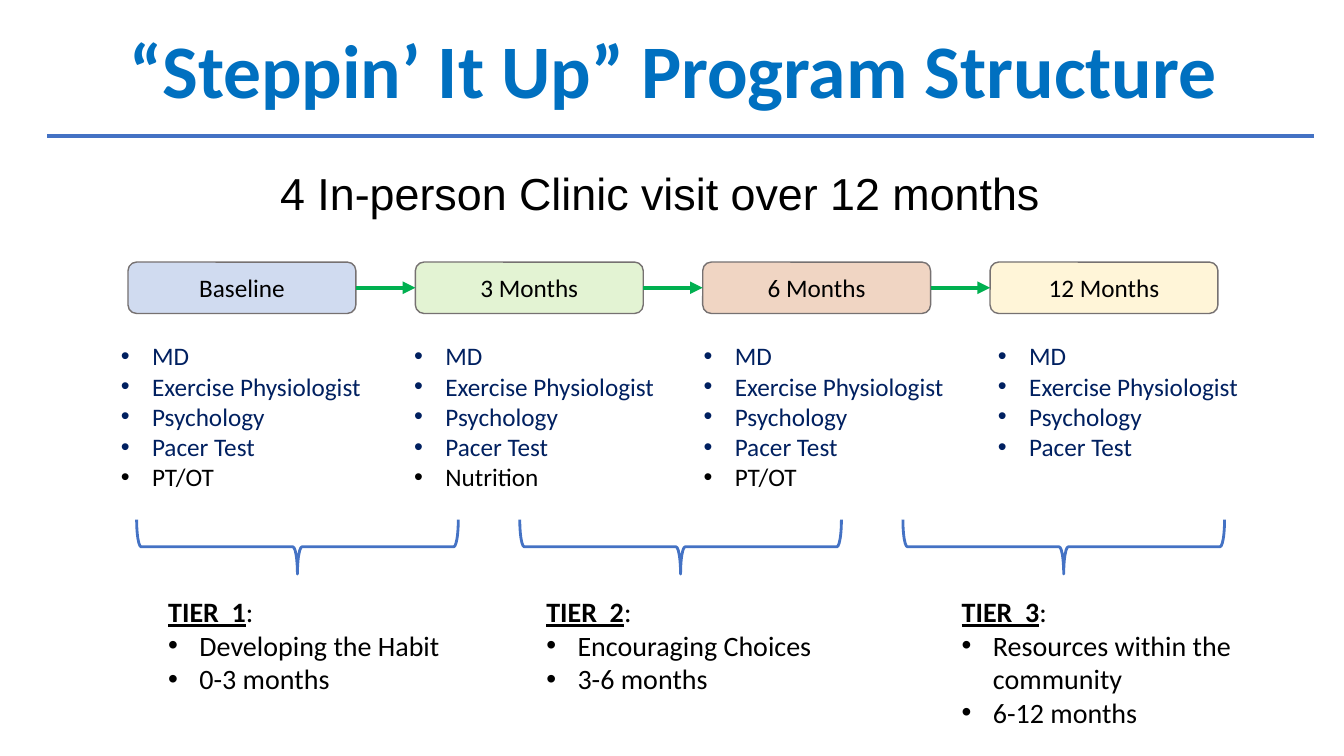
import pptx
import pptx.util
import pptx.dml.color
import pptx.enum.shapes
import pptx.enum.text
import pptx.oxml
import pptx.oxml.ns
import lxml.etree

Inches = pptx.util.Inches
Pt = pptx.util.Pt
RGBColor = pptx.dml.color.RGBColor
MSO_SHAPE = pptx.enum.shapes.MSO_SHAPE
STRAIGHT = pptx.enum.shapes.MSO_CONNECTOR.STRAIGHT
PP_ALIGN = pptx.enum.text.PP_ALIGN
MSO_ANCHOR = pptx.enum.text.MSO_ANCHOR
qn = pptx.oxml.ns.qn

TITLE_BLUE = RGBColor(0x00, 0x70, 0xC0)
BLUE = RGBColor(0x44, 0x72, 0xC4)
LIME = RGBColor(0x92, 0xD0, 0x50)
RUST = RGBColor(0xC5, 0x5A, 0x11)
YELLOW = RGBColor(0xFF, 0xD9, 0x66)
GRAY = RGBColor(0x76, 0x71, 0x71)
GREEN = RGBColor(0x00, 0xB0, 0x50)
NAVY = RGBColor(0x00, 0x20, 0x60)
BLACK = RGBColor(0x00, 0x00, 0x00)

CORE_TEAM = ["MD", "Exercise Physiologist", "Psychology", "Pacer Test"]
# label, fill, left of the list, extra staff at this visit
VISITS = [
    ("Baseline", BLUE, 1.1, ["PT/OT"]),
    ("3 Months", LIME, 4.01, ["Nutrition"]),
    ("6 Months", RUST, 6.88, ["PT/OT"]),
    ("12 Months", YELLOW, 9.8, []),
]
# left of the text, heading, items
TIERS = [
    (1.57, "TIER  1", ["Developing the Habit", "0-3 months"]),
    (5.32, "TIER  2", ["Encouraging Choices", "3-6 months"]),
    (9.44, "TIER  3", ["Resources within the community", "6-12 months"]),
]


def add_text(left, top, width, height, lines, size, font="Calibri", bullets_from=0):
    """Add a text box; lines from index bullets_from on get a bullet."""
    tf = slide.shapes.add_textbox(
        Inches(left), Inches(top), Inches(width), Inches(height)).text_frame
    tf.word_wrap = True
    tf.text = "\n".join(lines)
    for i, p in enumerate(tf.paragraphs):
        p.font.size = Pt(size)
        p.font.name = font
        p.font.color.rgb = BLACK
        for r in p.runs:
            r.font.size = Pt(size)
            r.font.name = font
            r.font.color.rgb = BLACK
        if i >= bullets_from:
            pPr = p._p.get_or_add_pPr()
            pPr.set("marL", str(Inches(0.31)))
            pPr.set("indent", str(-Inches(0.31)))
            bullet_font = pptx.oxml.parse_xml(
                '<a:buFont %s typeface="Arial"/>' % pptx.oxml.ns.nsdecls("a"))
            bullet = pptx.oxml.parse_xml(
                '<a:buChar %s char="•"/>' % pptx.oxml.ns.nsdecls("a"))
            pPr.insert(0, bullet_font)
            pPr.insert(1, bullet)
    return tf


def add_line(x1, y1, x2, y2, color, width):
    cxn = slide.shapes.add_connector(
        STRAIGHT, Inches(x1), Inches(y1), Inches(x2), Inches(y2))
    cxn.line.color.rgb = color
    cxn.line.width = Pt(width)
    lxml.etree.SubElement(cxn._element.spPr, qn("a:effectLst"))
    return cxn


prs = pptx.Presentation()
prs.slide_width = Inches(13.33)
prs.slide_height = Inches(7.5)
slide = prs.slides.add_slide(prs.slide_layouts[5])

# Title, rule and subtitle
title = slide.shapes.title
title.left, title.top = Inches(0.93), Inches(0.01)
title.width, title.height = Inches(11.5), Inches(1.45)
tf = title.text_frame
tf.text = "“Steppin’ It Up” Program Structure"
tf.vertical_anchor = MSO_ANCHOR.MIDDLE
p = tf.paragraphs[0]
p.alignment = PP_ALIGN.CENTER
p.line_spacing = 0.9
r = p.runs[0]
r.font.size = Pt(54)
r.font.name = "Calibri"
r.font.bold = True
r.font.color.rgb = TITLE_BLUE

add_line(0.47, 1.35, 13.03, 1.35, BLUE, 2.5)
add_text(2.68, 1.59, 9.37, 0.64, ["4 In-person Clinic visit over 12 months"],
         32, font="Arial", bullets_from=1)

# Visits: box, arrow from the previous box, staff list
previous = None
for i, (label, color, list_left, extra) in enumerate(VISITS):
    box = slide.shapes.add_shape(
        MSO_SHAPE.ROUNDED_RECTANGLE,
        Inches(1.27 + 2.85 * i), Inches(2.6), Inches(2.26), Inches(0.51))
    box.shadow.inherit = False
    box.fill.solid()
    box.fill.fore_color.rgb = color
    srgb = box._element.spPr.find(qn("a:solidFill")).find(qn("a:srgbClr"))
    lxml.etree.SubElement(srgb, qn("a:alpha")).set("val", "25000")
    box.line.color.rgb = GRAY
    box.line.width = Pt(1)
    tf = box.text_frame
    tf.text = label
    tf.vertical_anchor = MSO_ANCHOR.MIDDLE
    p = tf.paragraphs[0]
    p.alignment = PP_ALIGN.CENTER
    r = p.runs[0]
    r.font.size = Pt(18)
    r.font.name = "Calibri"
    r.font.color.rgb = BLACK

    if previous is not None:
        arrow = add_line(0, 0, 1, 0, GREEN, 3)
        arrow.begin_connect(previous, 3)
        arrow.end_connect(box, 1)
        ln = arrow.line._get_or_add_ln()
        lxml.etree.SubElement(ln, qn("a:tailEnd")).set("type", "triangle")
    previous = box

    staff = CORE_TEAM + extra
    tf = add_text(list_left, 3.33, 2.66, 0.1 + 0.3 * len(staff), staff, 18)
    for p in tf.paragraphs[:len(CORE_TEAM)]:
        p.font.color.rgb = NAVY
        p.runs[0].font.color.rgb = NAVY

# Tiers: brace pointing down to a heading with two items
for i, (left, heading, items) in enumerate(TIERS):
    brace = slide.shapes.add_shape(
        MSO_SHAPE.LEFT_BRACE,
        Inches(2.68 + 3.8 * i), Inches(3.83), Inches(0.54), Inches(3.19))
    brace.rotation = 270
    brace.shadow.inherit = False
    brace.fill.background()
    brace.line.color.rgb = BLUE
    brace.line.width = Pt(2)

    tf = add_text(left, 5.85, 2.96, 1.11, [heading] + items, 20, bullets_from=1)
    p = tf.paragraphs[0]
    p.runs[0].font.bold = True
    p.runs[0].font.underline = True
    r = p.add_run()
    r.text = ":"
    r.font.size = Pt(20)
    r.font.name = "Calibri"
    r.font.color.rgb = BLACK

prs.save("out.pptx")
